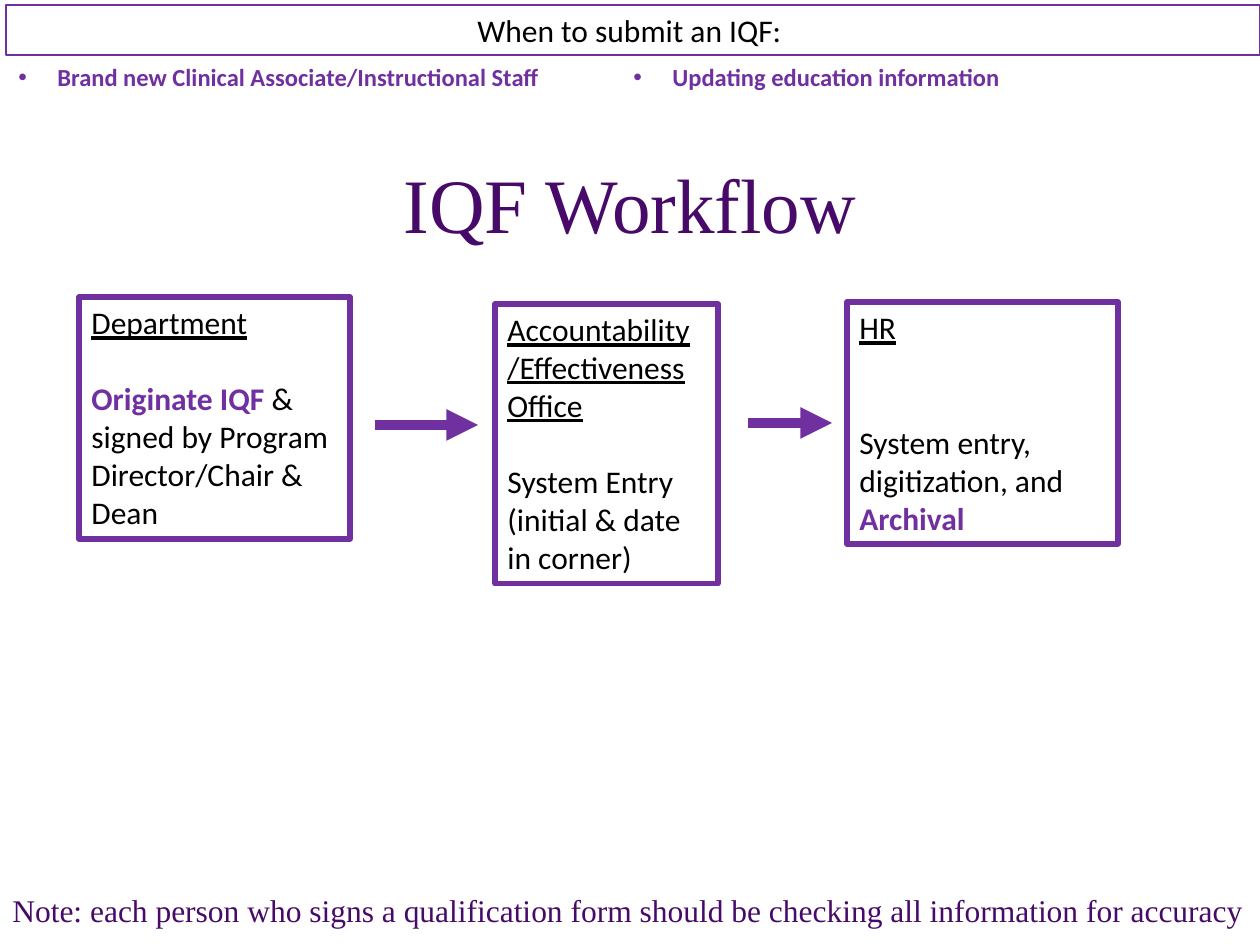
from dataclasses import dataclass, field

from lxml import etree
from pptx import Presentation
from pptx import util as u
from pptx.dml.color import RGBColor
from pptx.enum import shapes, text
from pptx.oxml import ns

EMU_PER_PX = 914400 / 126


def px(length: int) -> u.Emu:
    return u.Emu(round(length * EMU_PER_PX))


@dataclass(frozen=True)
class Theme:
    purple: RGBColor = RGBColor(0x70, 0x30, 0xA0)
    plum: RGBColor = RGBColor(0x47, 0x0A, 0x68)
    black: RGBColor = RGBColor(0, 0, 0)
    sans: str = "Calibri"
    serif: str = "Times New Roman"
    title: int = 44
    body: int = 18
    bullet: int = 14
    blank_line: int = 22  # points of space that one body line takes


THEME = Theme()
BODY = {"name": THEME.sans, "size": u.Pt(THEME.body), "color": THEME.black}
HEADING = BODY | {"underline": True}
STRONG = BODY | {"color": THEME.purple, "bold": True}
BULLET = STRONG | {"size": u.Pt(THEME.bullet)}
NOTE = {"name": THEME.serif, "size": u.Pt(THEME.body), "color": THEME.plum}
TITLE = NOTE | {"size": u.Pt(THEME.title)}


@dataclass(frozen=True)
class Box:
    left: int
    top: int
    width: int
    height: int

    def emu(self) -> tuple:
        return px(self.left), px(self.top), px(self.width), px(self.height)


@dataclass(frozen=True)
class Line:
    runs: list  # (words, format) pairs
    layout: dict = field(default_factory=dict)
    bulleted: bool = False


@dataclass(frozen=True)
class Step:
    box: Box
    heading: str
    gap_lines: int
    action: list


@dataclass(frozen=True)
class Arrow:
    start: int
    end: int
    y: int


def add_bullet(paragraph) -> None:
    props = paragraph._p.get_or_add_pPr()
    props.set("marL", str(px(39)))
    props.set("indent", str(-px(39)))
    etree.SubElement(props, ns.qn("a:buFont")).set("typeface", "Arial")
    etree.SubElement(props, ns.qn("a:buChar")).set("char", "•")


def write(frame, lines: list[Line], **frame_format) -> None:
    settings = {"word_wrap": True, "vertical_anchor": text.MSO_ANCHOR.TOP}
    for key, value in (settings | frame_format).items():
        setattr(frame, key, value)
    for index, line in enumerate(lines):
        paragraph = frame.paragraphs[0] if index == 0 else frame.add_paragraph()
        if line.bulleted:
            add_bullet(paragraph)
        for key, value in ({"alignment": text.PP_ALIGN.LEFT} | line.layout).items():
            setattr(paragraph, key, value)
        for words, style in line.runs:
            run = paragraph.add_run()
            run.text = words
            for key, value in style.items():
                if key == "color":
                    run.font.color.rgb = value
                else:
                    setattr(run.font, key, value)


def add_label(slide, box: Box, line: Line, **frame_format) -> None:
    write(slide.shapes.add_textbox(*box.emu()).text_frame, [line], **frame_format)


def add_frame(slide, box: Box, lines: list[Line], border: float) -> None:
    frame = slide.shapes.add_shape(shapes.MSO_SHAPE.RECTANGLE, *box.emu())
    frame.shadow.inherit = False
    frame.fill.background()
    frame.line.color.rgb = THEME.purple
    frame.line.width = u.Pt(border)
    write(frame.text_frame, lines, auto_size=text.MSO_AUTO_SIZE.SHAPE_TO_FIT_TEXT)


def add_step(slide, step: Step) -> None:
    gap = u.Pt(step.gap_lines * THEME.blank_line)
    lines = [Line([(step.heading, HEADING)]), Line(step.action, {"space_before": gap})]
    add_frame(slide, step.box, lines, border=3)


def add_arrow(slide, arrow: Arrow) -> None:
    connector = slide.shapes.add_connector(
        shapes.MSO_CONNECTOR.STRAIGHT,
        px(arrow.start), px(arrow.y), px(arrow.end), px(arrow.y))
    connector.line.color.rgb = THEME.purple
    connector.line.width = u.Pt(6)
    outline = connector.line._get_or_add_ln()
    etree.SubElement(outline, ns.qn("a:tailEnd")).set("type", "triangle")
    etree.SubElement(connector._element.spPr, ns.qn("a:effectLst"))


STEPS = [
    Step(Box(79, 297, 271, 242), "Department", 1,
         [("Originate IQF ", STRONG),
          ("& signed by Program Director/Chair & Dean", BODY)]),
    Step(Box(495, 304, 223, 280), "Accountability /Effectiveness Office", 1,
         [("System Entry (initial & date in corner)", BODY)]),
    Step(Box(847, 302, 271, 242), "HR", 2,
         [("System entry, digitization, and ", BODY), ("Archival", STRONG)]),
]
ARROWS = [Arrow(375, 478, 425), Arrow(748, 832, 423)]
REASONS = ["Brand new Clinical Associate/Instructional Staff",
           "Updating education information"]


def main() -> None:
    deck = Presentation()
    deck.slide_width, deck.slide_height = px(1260), px(945)
    slide = deck.slides.add_slide(deck.slide_layouts[6])
    centred = {"alignment": text.PP_ALIGN.CENTER}

    # Title
    add_label(slide, Box(87, 117, 1086, 183),
              Line([("IQF Workflow", TITLE)], centred | {"line_spacing": 0.9}),
              vertical_anchor=text.MSO_ANCHOR.MIDDLE)

    # Workflow
    for step in STEPS:
        add_step(slide, step)
    for arrow in ARROWS:
        add_arrow(slide, arrow)

    # When to submit: heading bar and two columns of reasons
    add_frame(slide, Box(6, 5, 1254, 50),
              [Line([("When to submit an IQF: ", BODY)], centred)], border=1.5)
    for column, reason in enumerate(REASONS):
        add_label(slide, Box(6 + 615 * column, 56, 615, 43),
                  Line([(reason, BULLET)], bulleted=True))

    # Closing note
    add_label(slide, Box(0, 885, 1260, 50),
              Line([("Note: each person who signs a qualification form should be "
                     "checking all information for accuracy", NOTE)]),
              word_wrap=False)

    deck.save("out.pptx")


if __name__ == "__main__":
    main()
